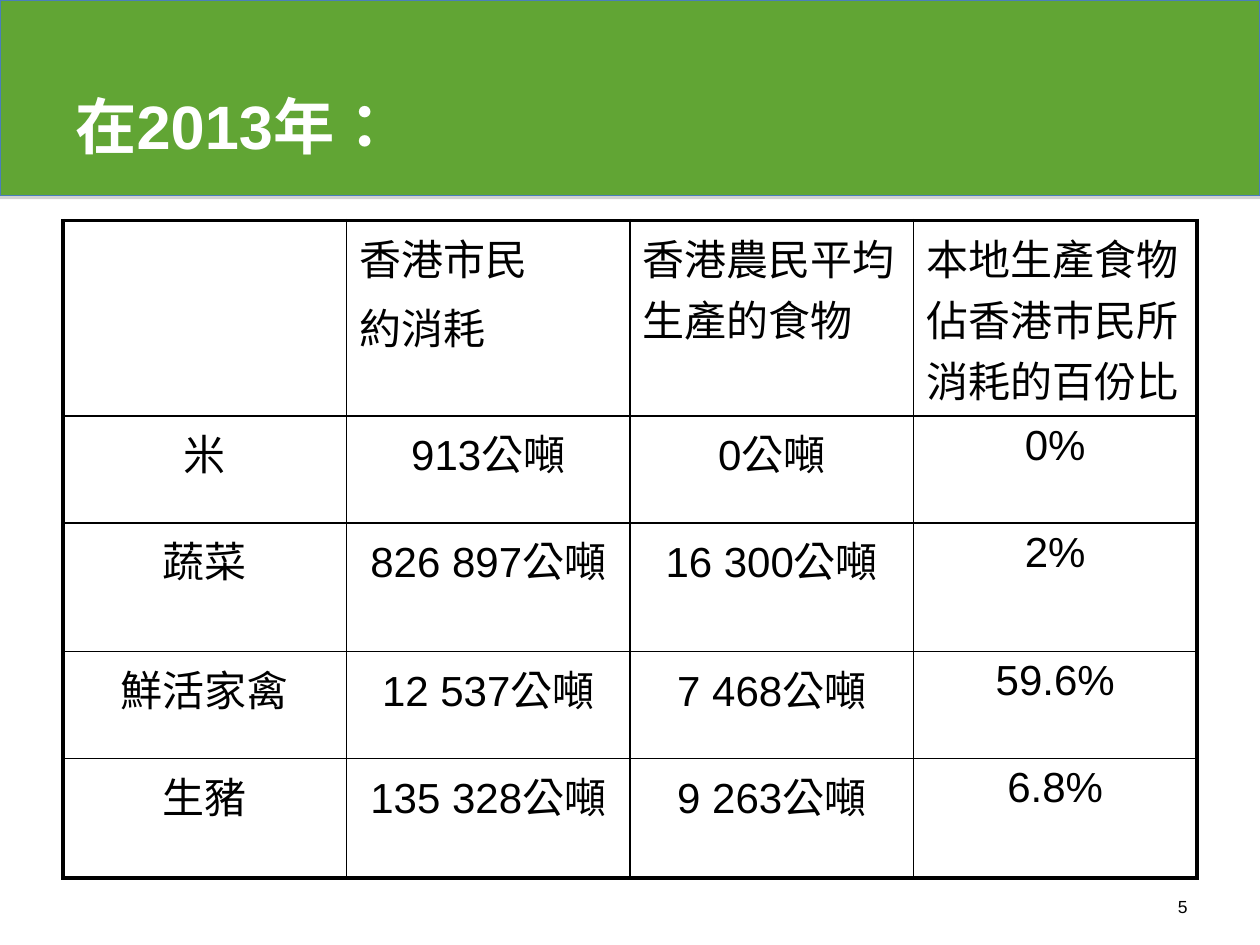
from dataclasses import dataclass

from lxml import etree
from pptx import Presentation
from pptx.dml.color import RGBColor
from pptx.enum.lang import MSO_LANGUAGE_ID
from pptx.enum.shapes import MSO_SHAPE
from pptx.enum.text import MSO_ANCHOR, PP_ALIGN
from pptx.oxml.ns import qn
from pptx.util import Inches, Pt

RECTANGLE = MSO_SHAPE.RECTANGLE
LEFT, CENTER = PP_ALIGN.LEFT, PP_ALIGN.CENTER
TOP, MIDDLE = MSO_ANCHOR.TOP, MSO_ANCHOR.MIDDLE
CHINESE = MSO_LANGUAGE_ID.TRADITIONAL_CHINESE if hasattr(
    MSO_LANGUAGE_ID, "TRADITIONAL_CHINESE") else MSO_LANGUAGE_ID.TAIWAN_CHINESE if hasattr(
    MSO_LANGUAGE_ID, "TAIWAN_CHINESE") else None

COLORS = {"band": "61A534", "band_line": "4A7EBB", "shadow": "808080",
          "text": "000000", "title": "FFFFFF", "border": "000000"}
FONT = "Arial"
WIDTH, HEIGHT = Inches(10), Inches(7.5)
OUTER_LINE, INNER_LINE = Pt(2.25), Pt(1)
ROW_HEIGHTS = (1.55, 0.85, 1.02, 0.85, 0.95)
FOOD_ROWS = (
    ("", "香港市民\n約消耗", "香港農民平均生產的食物", "本地生產食物佔香港巿民所消耗的百份比"),
    ("米", "913公噸", "0公噸", "0%"),
    ("蔬菜", "826 897公噸", "16 300公噸", "2%"),
    ("鮮活家禽", "12 537公噸", "7 468公噸", "59.6%"),
    ("生豬", "135 328公噸", "9 263公噸", "6.8%"),
)


@dataclass
class Label:
    text: str
    left: float
    top: float
    width: float
    height: float
    size: float
    color: str
    bold: bool = False
    anchor: MSO_ANCHOR = TOP


LABELS = (
    Label("在2013年：", 0.5, 0.6, 9, 0.79, 35, "title", True, MIDDLE),
    Label("5", 9.25, 7.06, 0.87, 0.24, 10, "text"),
)


def write(frame, text: str, size: float, color: str, bold: bool = False, align=LEFT) -> None:
    frame.text = text
    for index, para in enumerate(frame.paragraphs):
        para.alignment = align
        if index:
            para.space_before = Pt(size * 0.2)
        for span in para.runs:
            span.font.name = FONT
            span.font.size = Pt(size)
            span.font.bold = bold
            span.font.color.rgb = RGBColor.from_string(COLORS[color])
            if CHINESE is not None:
                span.font.language_id = CHINESE


def add_label(page, label: Label) -> None:
    box = page.shapes.add_textbox(Inches(label.left), Inches(label.top),
                                  Inches(label.width), Inches(label.height))
    frame = box.text_frame
    frame.word_wrap = True
    frame.vertical_anchor = label.anchor
    write(frame, label.text, label.size, label.color, label.bold)


def add_solid_color(parent, color: str):
    fill = etree.SubElement(parent, qn("a:solidFill"))
    return etree.SubElement(fill, qn("a:srgbClr"), val=COLORS[color])


def add_header_band(page) -> None:
    band = page.shapes.add_shape(RECTANGLE, 0, 0, WIDTH, Inches(1.55))
    band.fill.solid()
    band.fill.fore_color.rgb = RGBColor.from_string(COLORS["band"])
    band.line.color.rgb = RGBColor.from_string(COLORS["band_line"])
    band.line.width = Pt(0.75)
    band.shadow.inherit = False
    effects = band.fill._xPr.find(qn("a:effectLst"))
    shadow = etree.SubElement(effects, qn("a:outerShdw"), blurRad="0",
                              dist=str(Pt(1.8)), dir="5400000", rotWithShape="0")
    tint = etree.SubElement(shadow, qn("a:srgbClr"), val=COLORS["shadow"])
    etree.SubElement(tint, qn("a:alpha"), val="35000")


def set_borders(cell, row: int, column: int, rows: int, columns: int) -> None:
    """Draw heavy lines on the table's edge and light lines inside it."""
    on_edge = {"a:lnL": column == 0, "a:lnR": column == columns - 1,
               "a:lnT": row == 0, "a:lnB": row == rows - 1}
    properties = cell._tc.get_or_add_tcPr()
    for tag, outer in on_edge.items():
        width = OUTER_LINE if outer else INNER_LINE
        line = etree.SubElement(properties, qn(tag), w=str(width))
        add_solid_color(line, "border")


def add_food_table(page) -> None:
    rows, columns = len(FOOD_ROWS), len(FOOD_ROWS[0])
    table = page.shapes.add_table(rows, columns, Inches(0.5), Inches(1.75),
                                  Inches(9), Inches(sum(ROW_HEIGHTS))).table
    table.first_row = table.horz_banding = False
    for row, texts in enumerate(FOOD_ROWS):
        table.rows[row].height = Inches(ROW_HEIGHTS[row])
        for column, text in enumerate(texts):
            cell = table.cell(row, column)
            set_borders(cell, row, column, rows, columns)
            cell.fill.background()
            write(cell.text_frame, text, 24, "text", align=CENTER if row else LEFT)


def main() -> None:
    deck = Presentation()
    deck.slide_width, deck.slide_height = WIDTH, HEIGHT
    page = deck.slides.add_slide(deck.slide_layouts[6])
    add_header_band(page)
    for label in LABELS:
        add_label(page, label)
    add_food_table(page)
    deck.save("out.pptx")


if __name__ == "__main__":
    main()
